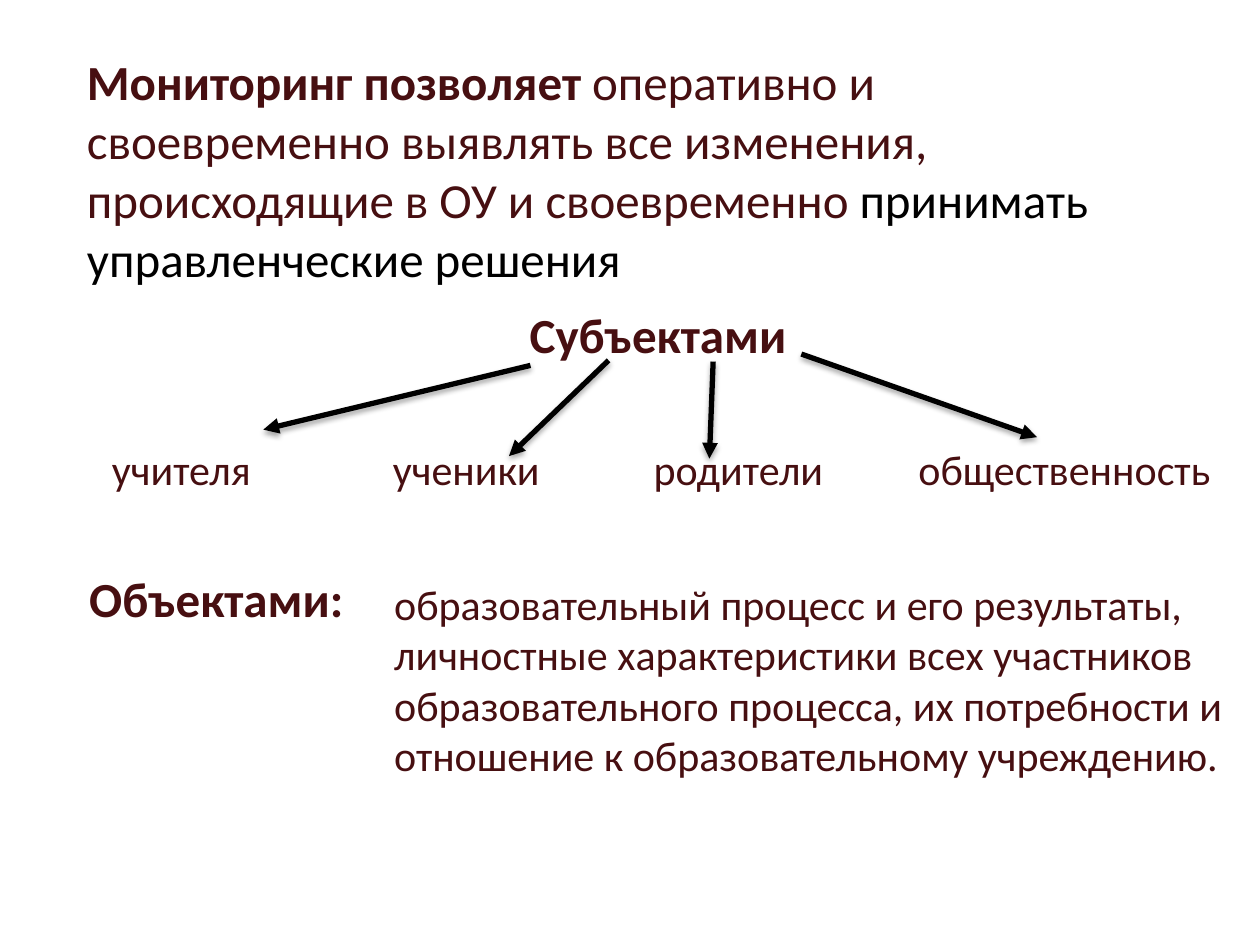
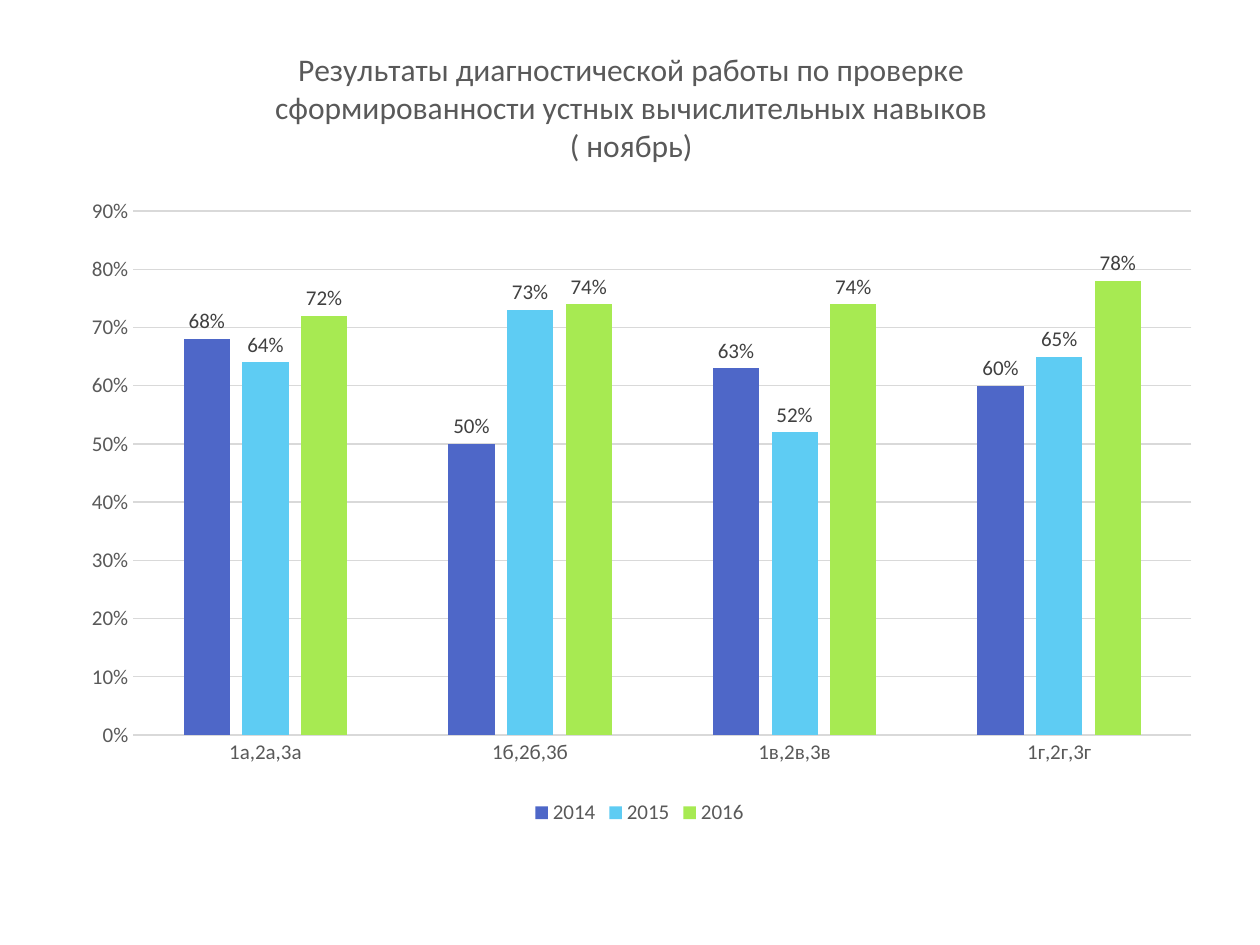
from itertools import pairwise
from lxml.etree import SubElement
from pptx import Presentation
from pptx.chart.data import CategoryChartData
from pptx.dml.color import RGBColor
from pptx.enum.chart import XL_CHART_TYPE, XL_LABEL_POSITION, XL_LEGEND_POSITION, XL_TICK_MARK
from pptx.enum.shapes import MSO_CONNECTOR
from pptx.enum.text import MSO_ANCHOR, MSO_AUTO_SIZE, PP_ALIGN
from pptx.oxml import parse_xml
from pptx.oxml.ns import nsdecls, qn
from pptx.util import Inches, Pt

FONT = "Calibri"
MAROON = RGBColor(0x47, 0x0F, 0x11)
BLACK = RGBColor(0, 0, 0)
GREY = RGBColor(0x59, 0x59, 0x59)
LABEL_GREY = RGBColor(0x40, 0x40, 0x40)
GRID_GREY = RGBColor(0xD9, 0xD9, 0xD9)
BLUE = RGBColor(0x4E, 0x67, 0xC8)
SKY = RGBColor(0x5E, 0xCC, 0xF3)
GREEN = RGBColor(0xA7, 0xEA, 0x52)

TITLE_ONLY, BLANK = 5, 6  # layout indexes

SHADOW = f"""<a:effectLst {nsdecls("a")}>
  <a:outerShdw blurRad="40000" dist="23000" dir="5400000" rotWithShape="0">
    <a:srgbClr val="000000"><a:alpha val="35000"/></a:srgbClr>
  </a:outerShdw></a:effectLst>"""


def style_font(font, size, color, bold=False):
    font.name = FONT
    font.size = Pt(size)
    font.bold = bold
    font.color.rgb = color


def add_text(page, box, text, size, bold=False):
    shape = page.shapes.add_textbox(*map(Inches, box))
    shape.text_frame.word_wrap = True
    para = shape.text_frame.paragraphs[0]
    para.text = text
    style_font(para.font, size, MAROON, bold)


def add_arrow(page, start, end):
    arrow = page.shapes.add_connector(MSO_CONNECTOR.STRAIGHT, *map(Inches, start + end))
    arrow.line.color.rgb = BLACK
    arrow.line.width = Pt(3)
    properties = arrow.element.spPr
    SubElement(properties.find(qn("a:ln")), qn("a:tailEnd"), type="triangle")
    properties.append(parse_xml(SHADOW))


def place_statement(page, box):
    """Main statement, in the title placeholder."""
    title = page.shapes.title
    title.left, title.top, title.width, title.height = map(Inches, box)
    frame = title.text_frame
    frame.word_wrap = True
    frame.auto_size = MSO_AUTO_SIZE.NONE
    frame.vertical_anchor = MSO_ANCHOR.TOP
    para = frame.paragraphs[0]
    para.alignment = PP_ALIGN.LEFT
    for text, color, bold in (
        ("Мониторинг позволяет ", MAROON, True),
        ("оперативно и своевременно выявлять все изменения, "
         "происходящие в ОУ и своевременно ", MAROON, False),
        ("принимать управленческие решения", BLACK, False),
    ):
        span = para.add_run()
        span.text = text
        style_font(span.font, 28, color, bold)


def place_subjects(page, box):
    """Heading with an arrow to each of the four subjects."""
    left, top, width, height = box
    add_text(page, (left + 0.36 * width, top, 2.4, 0.57), "Субъектами", 28, bold=True)

    # Each label reaches to the left edge of the next one
    names = ("учителя", "ученики", "родители", "общественность")
    edges = (0, 2.23, 4.3, 6.4, width)
    for name, (edge, next_edge) in zip(names, pairwise(edges)):
        add_text(page, (left + edge, top + 1.1, next_edge - edge, 0.5), name, 24)

    # Arrow starts and ends, from the corner of the box
    for start, end in (
        ((3.42, 0.53), (1.3, 1.04)),
        ((4.04, 0.49), (3.25, 1.25)),
        ((4.87, 0.5), (4.84, 1.27)),
        ((5.57, 0.44), (7.44, 1.1)),
    ):
        add_arrow(page, *((left + x, top + y) for x, y in (start, end)))


def place_objects(page, box):
    """Heading on the left, description on the right."""
    left, top, width, height = box
    add_text(page, (left, top, 2.4, 0.57), "Объектами:", 28, bold=True)
    add_text(
        page, (left + 2.42, top + 0.08, width - 2.42, height - 0.08),
        "образовательный процесс и его результаты, личностные характеристики всех "
        "участников образовательного процесса, их потребности и отношение к "
        "образовательному учреждению.", 24)


def style_axis(axis):
    axis.major_tick_mark = axis.minor_tick_mark = XL_TICK_MARK.NONE
    style_font(axis.tick_labels.font, 12, GREY)


def fix_layout(chart, tag, position, **settings):
    """Place a chart part by shares of the chart; position is where its layout belongs."""
    part = chart.element.find(".//" + qn(tag))
    layout = part.find(qn("c:layout"))
    if layout is None:
        layout = part.makeelement(qn("c:layout"))
        part.insert(position, layout)
    manual = SubElement(layout, qn("c:manualLayout"))
    for key, value in settings.items():
        SubElement(manual, qn(f"c:{key}"), val=str(value))


def place_results_chart(page, box):
    """Column chart of results by class and year."""
    results = (
        ("2014", BLUE, (0.68, 0.5, 0.63, 0.6)),
        ("2015", SKY, (0.64, 0.73, 0.52, 0.65)),
        ("2016", GREEN, (0.72, 0.74, 0.74, 0.78)),
    )
    data = CategoryChartData(number_format="0%")
    data.categories = ("1а,2а,3а", "1б,2б,3б", "1в,2в,3в", "1г,2г,3г")
    for year, _, values in results:
        data.add_series(year, values)
    chart = page.shapes.add_chart(
        XL_CHART_TYPE.COLUMN_CLUSTERED, *map(Inches, box), data).chart
    style_font(chart.font, 10, BLACK)

    # Title
    frame = chart.chart_title.text_frame
    frame.text = ("Результаты диагностической работы по проверке сформированности "
                  "устных вычислительных навыков\n( ноябрь)")
    for para in frame.paragraphs:
        style_font(para.font, 18, GREY)
    chart.chart_title.include_in_layout = False
    fix_layout(chart, "c:title", 1, xMode="edge", yMode="edge", x=0.18, y=0.01)

    # Columns and their labels
    plot = chart.plots[0]
    plot.gap_width, plot.overlap = 219, -27
    plot.vary_by_categories = False
    for series, (_, color, _) in zip(plot.series, results):
        series.format.fill.solid()
        series.format.fill.fore_color.rgb = color
        labels = series.data_labels
        labels.show_value = True
        labels.number_format, labels.number_format_is_linked = "0%", False
        labels.position = XL_LABEL_POSITION.OUTSIDE_END
        style_font(labels.font, 12, LABEL_GREY)

    # Axes
    categories, percents = chart.category_axis, chart.value_axis
    style_axis(categories)
    style_axis(percents)
    percents.minimum_scale, percents.maximum_scale, percents.major_unit = 0, 0.9, 0.1
    percents.tick_labels.number_format = "0%"
    percents.tick_labels.number_format_is_linked = False
    percents.format.line.fill.background()
    for line in (categories.format.line, percents.major_gridlines.format.line):
        line.color.rgb = GRID_GREY
        line.width = Pt(0.75)

    # Legend and plot area
    chart.has_legend = True
    chart.legend.position = XL_LEGEND_POSITION.BOTTOM
    chart.legend.include_in_layout = False
    style_font(chart.legend.font, 12, GREY)
    fix_layout(chart, "c:plotArea", 0, layoutTarget="inner", xMode="edge", yMode="edge",
               x=0.06, y=0.22, w=0.92, h=0.66)


def main():
    deck = Presentation()
    deck.slide_width, deck.slide_height = Inches(10), Inches(7.5)

    monitoring = deck.slides.add_slide(deck.slide_layouts[TITLE_ONLY])
    place_statement(monitoring, (0.59, 0.36, 8.5, 1.99))
    place_subjects(monitoring, (0.79, 2.37, 9.21, 1.6))
    place_objects(monitoring, (0.61, 4.46, 9.27, 1.8))

    diagnostics = deck.slides.add_slide(deck.slide_layouts[BLANK])
    place_results_chart(diagnostics, (0.51, 0.29, 9.13, 6.3))

    deck.save("out.pptx")


if __name__ == "__main__":
    main()
